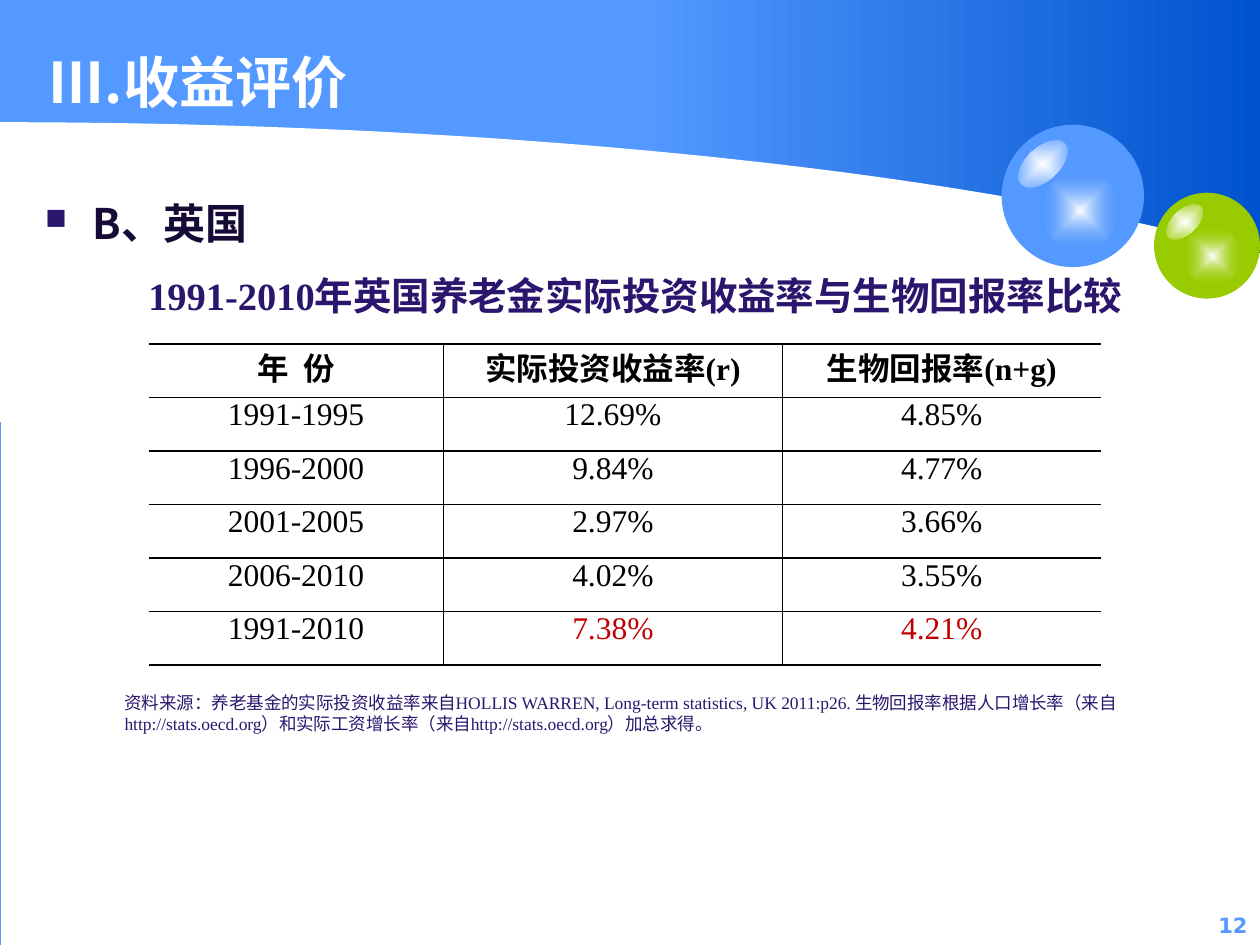
import dataclasses

import lxml.etree
import pptx
import pptx.dml.color
import pptx.enum.shapes
import pptx.enum.text
import pptx.oxml
import pptx.oxml.ns
import pptx.util

Inches = pptx.util.Inches
Pt = pptx.util.Pt
SHAPE = pptx.enum.shapes.MSO_SHAPE
ALIGN = pptx.enum.text.PP_ALIGN
ANCHOR = pptx.enum.text.MSO_ANCHOR
qn = pptx.oxml.ns.qn

SERIF = "Times New Roman"
SANS = "Noto Sans CJK SC"
BLUE, GREEN, WHITE, BLACK = "5399FF", "99CC00", "FFFFFF", "000000"
INDIGO, RED = "2B166E", "C00000"

HEADER = ("年  份", "实际投资收益率(r)", "生物回报率(n+g)")
RETURNS = (
    ("1991-1995", "12.69%", "4.85%"),
    ("1996-2000", "9.84%", "4.77%"),
    ("2001-2005", "2.97%", "3.66%"),
    ("2006-2010", "4.02%", "3.55%"),
    ("1991-2010", "7.38%", "4.21%"),
)
COLUMN_WIDTHS = (2.34, 2.69, 2.53)
ROW_HEIGHT = 0.425
SOURCE_NOTE = (
    "资料来源：养老基金的实际投资收益率来自HOLLIS WARREN, Long-term statistics, "
    "UK 2011:p26. 生物回报率根据人口增长率（来自http://stats.oecd.org）"
    "和实际工资增长率（来自http://stats.oecd.org）加总求得。"
)


@dataclasses.dataclass
class Ball:
    left: float
    top: float
    size: float
    color: str


BALLS = (Ball(9.16, 1.53, 0.84, GREEN), Ball(7.95, 0.99, 1.13, BLUE))


def rgb(color: str):
    return pptx.dml.color.RGBColor.from_string(color)


def write(tf, text: str, *, size: float, color: str, font: str = SERIF,
          bold: bool = False, align=ALIGN.LEFT):
    p = tf.paragraphs[0]
    p.alignment = align
    r = p.add_run()
    r.text = text
    r.font.size = Pt(size)
    r.font.bold = bold
    r.font.name = font
    r.font.color.rgb = rgb(color)
    ea = lxml.etree.SubElement(r.font._element, qn("a:ea"))
    ea.set("typeface", SANS)
    return p


def add_text(s, box: tuple, text: str, *, anchor=ANCHOR.TOP, **style):
    tf = s.shapes.add_textbox(*map(Inches, box)).text_frame
    tf.word_wrap = True
    tf.vertical_anchor = anchor
    return write(tf, text, **style)


def add_shape(s, kind, box: tuple, color: str):
    sp = s.shapes.add_shape(kind, *map(Inches, box))
    return plain(sp, color)


def plain(sp, color: str):
    sp.shadow.inherit = False
    sp.line.fill.background()
    sp.fill.solid()
    sp.fill.fore_color.rgb = rgb(color)
    return sp


def set_glow(sp, color: str, alpha: int) -> None:
    sp.fill.background()
    glow = pptx.oxml.parse_xml(
        f'<a:gradFill {pptx.oxml.ns.nsdecls("a")} rotWithShape="1"><a:gsLst>'
        f'<a:gs pos="0"><a:srgbClr val="{WHITE}"/></a:gs>'
        f'<a:gs pos="100000"><a:srgbClr val="{color}">'
        f'<a:alpha val="{alpha * 1000}"/></a:srgbClr></a:gs></a:gsLst>'
        '<a:path path="shape"><a:fillToRect l="50000" t="50000" '
        'r="50000" b="50000"/></a:path></a:gradFill>')
    props = sp._element.spPr
    props.replace(props.find(qn("a:noFill")), glow)


def add_ball(s, ball: Ball) -> None:
    def part(x: float, y: float, w: float, h: float):
        box = (ball.left + x * ball.size, ball.top + y * ball.size,
               w * ball.size, h * ball.size)
        return add_shape(s, SHAPE.OVAL, box, ball.color)

    part(0, 0, 1, 1)
    set_glow(part(0.27, 0.32, 0.56, 0.56), ball.color, 0)
    highlight = part(0.08, 0.16, 0.42, 0.23)
    highlight.rotation = 317.2
    set_glow(highlight, ball.color, 100)


def bezier(a: float, b: float, c: float, d: float, t: float) -> float:
    u = 1 - t
    return u**3 * a + 3 * u * u * t * b + 3 * u * t * t * c + t**3 * d


def add_background(s) -> None:
    fill = s.background.fill
    fill.solid()
    fill.fore_color.rgb = rgb(BLUE)

    band = add_shape(s, SHAPE.RECTANGLE, (5.07, 0, 4.93, 2.97), BLUE)
    band.fill.gradient()
    band.fill.gradient_angle = 0
    for stop, color, position in zip(band.fill.gradient_stops, (BLUE, "0053CE"), (0, 1)):
        stop.color.rgb = rgb(color)
        stop.position = position

    add_shape(s, SHAPE.RECTANGLE, (0.01, 2.01, 9.99, 5.49), WHITE)
    steps = 60
    curve = [(Inches(bezier(0, 4.01, 7.77, 10.02, i / steps)),
              Inches(bezier(0.97, 0.97, 1.36, 2.02, i / steps)))
             for i in range(steps + 1)]
    builder = s.shapes.build_freeform(*curve[0])
    builder.add_line_segments(curve[1:] + [(0, Inches(3.35))], close=True)
    plain(builder.convert_to_shape(), WHITE)
    for ball in BALLS:
        add_ball(s, ball)


def set_border(cell, side: str, width: float) -> None:
    ln = lxml.etree.SubElement(cell._tc.get_or_add_tcPr(), qn(f"a:ln{side}"))
    ln.set("w", str(Pt(width)))
    if width:
        fill = lxml.etree.SubElement(ln, qn("a:solidFill"))
        lxml.etree.SubElement(fill, qn("a:srgbClr")).set("val", BLACK)
    else:
        lxml.etree.SubElement(ln, qn("a:noFill"))


def add_returns_table(s) -> None:
    rows = (HEADER,) + RETURNS
    last_row, last_col = len(rows) - 1, len(HEADER) - 1
    box = (1.18, 2.73, sum(COLUMN_WIDTHS), ROW_HEIGHT * len(rows))
    table = s.shapes.add_table(len(rows), len(HEADER), *map(Inches, box)).table
    table.horz_banding = False
    table.first_row = False
    for column, width in zip(table.columns, COLUMN_WIDTHS):
        column.width = Inches(width)
    for i, row in enumerate(rows):
        table.rows[i].height = Inches(ROW_HEIGHT)
        for j, text in enumerate(row):
            cell = table.cell(i, j)
            cell.margin_left = cell.margin_right = Inches(0.07)
            cell.margin_top = cell.margin_bottom = 0
            set_border(cell, "L", 1 if j > 0 else 0)
            set_border(cell, "R", 1 if j < last_col else 0)
            set_border(cell, "T", 1 if i > 0 else 1.5)
            set_border(cell, "B", 1 if i < last_row else 1.5)
            cell.fill.background()
            color = RED if i == last_row and j > 0 else BLACK
            write(cell.text_frame, text, size=18, color=color,
                  bold=i == 0, align=ALIGN.CENTER)


def set_bullet(p) -> None:
    props = p._p.get_or_add_pPr()
    props.set("marL", str(Inches(0.38)))
    props.set("indent", str(Inches(-0.38)))
    color = lxml.etree.SubElement(props, qn("a:buClr"))
    lxml.etree.SubElement(color, qn("a:srgbClr")).set("val", INDIGO)
    lxml.etree.SubElement(props, qn("a:buSzPct")).set("val", "70000")
    lxml.etree.SubElement(props, qn("a:buChar")).set("char", "■")


def main() -> None:
    prs = pptx.Presentation()
    prs.slide_width, prs.slide_height = Inches(10), Inches(7.5)
    s = prs.slides.add_slide(prs.slide_layouts[6])
    add_background(s)
    add_text(s, (6.83, 7.19, 3.17, 0.33), "12", size=12, color=BLUE,
             font="DejaVu Sans", bold=True, align=ALIGN.RIGHT)
    add_text(s, (0.29, 0.24, 9.14, 0.72), "Ⅲ.收益评价", size=32, color=WHITE,
             font=SANS, bold=True, anchor=ANCHOR.BOTTOM)
    set_bullet(add_text(s, (0.26, 1.52, 9, 4.95), "B、英国", size=24,
                        color="160B37", font=SANS, bold=True))
    add_text(s, (0.89, 5.44, 8.36, 0.44), SOURCE_NOTE, size=10, color=INDIGO)
    add_returns_table(s)
    add_text(s, (1.03, 2.11, 8.02, 0.84),
             "1991-2010年英国养老金实际投资收益率与生物回报率比较",
             size=22, color=INDIGO, bold=True, align=ALIGN.CENTER)
    prs.save("out.pptx")


if __name__ == "__main__":
    main()
